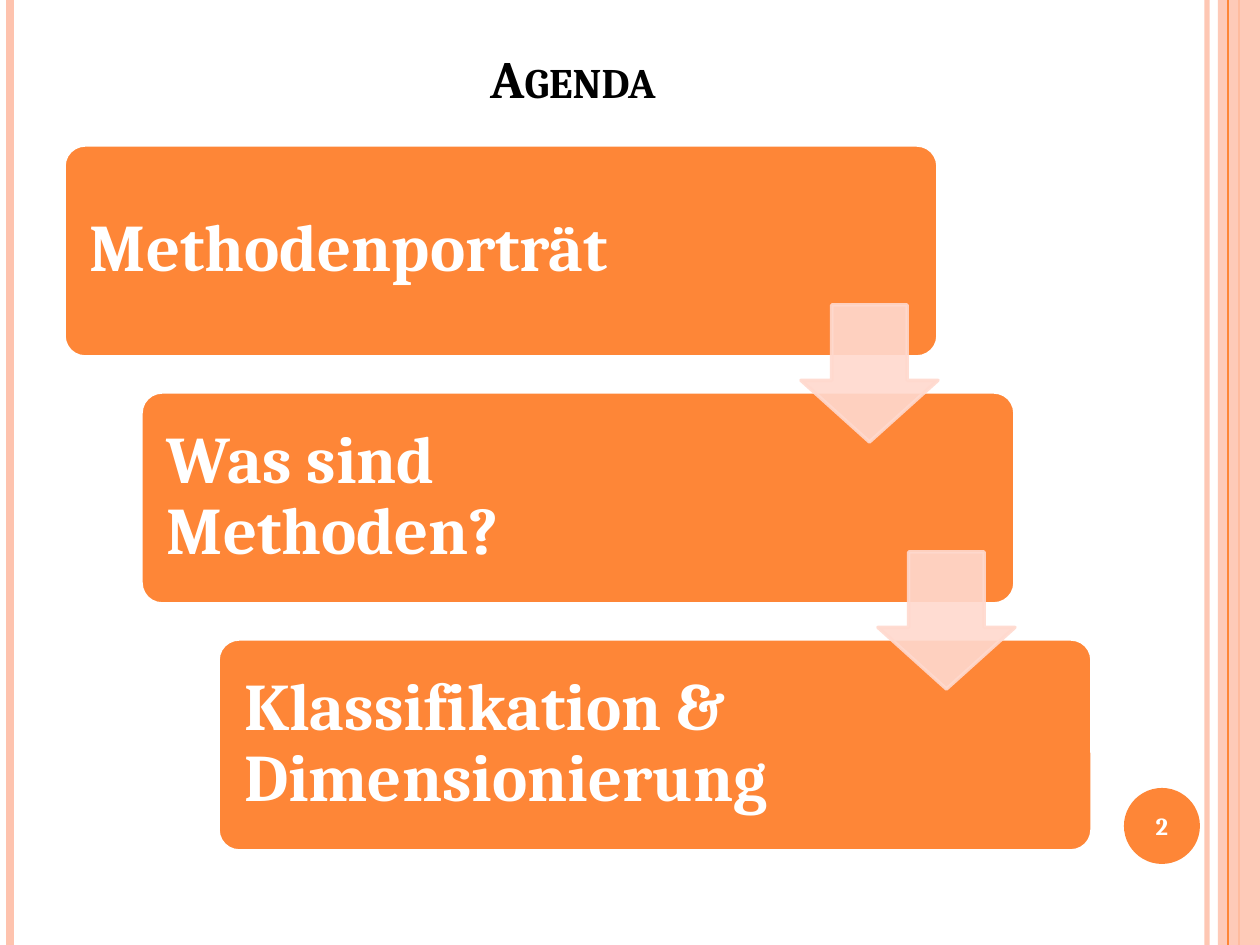
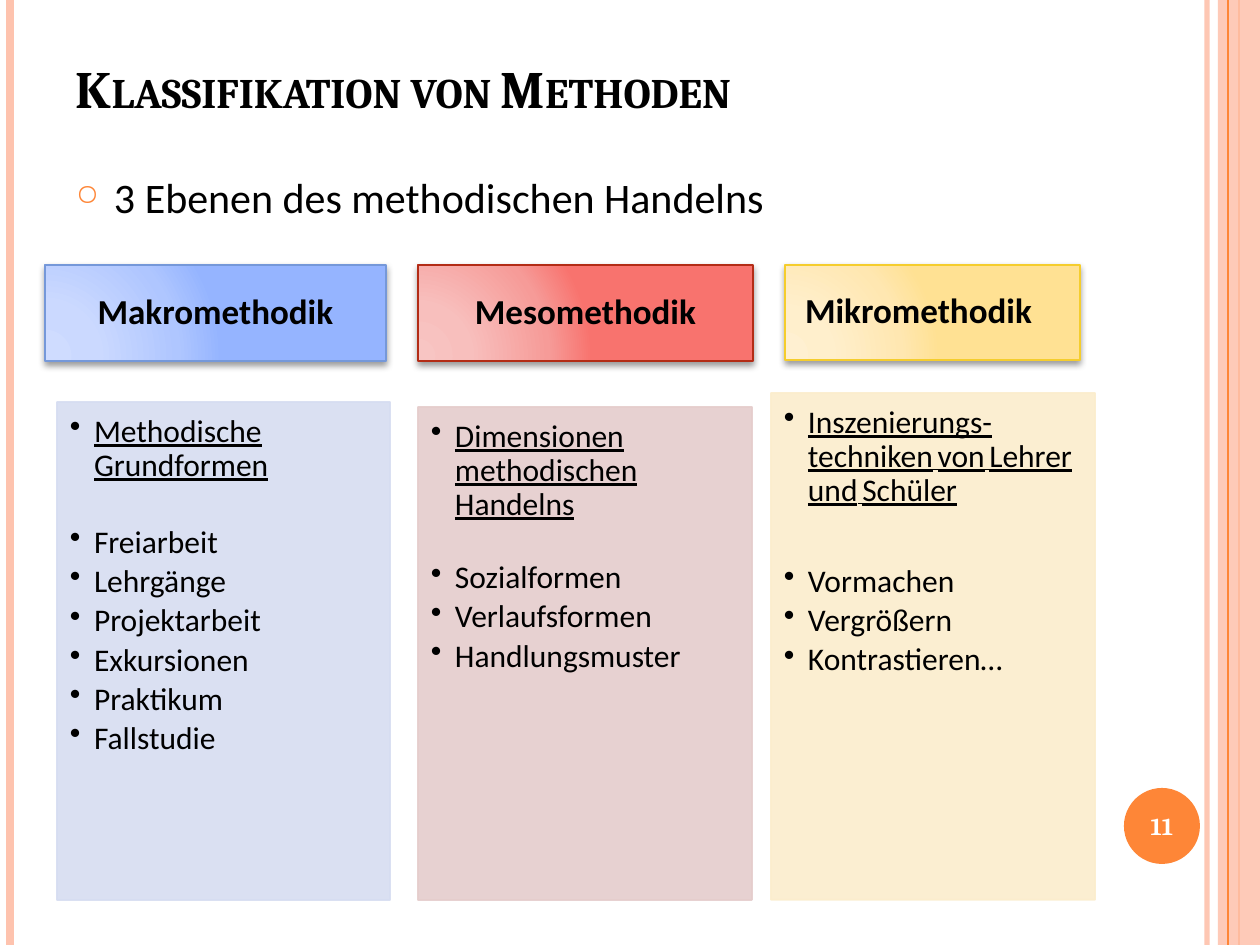
import pptx
import pptx.dml.color
import pptx.enum.shapes
import pptx.enum.text
import pptx.oxml
import pptx.oxml.ns
import pptx.util

SCALE = 914400 / 126  # EMU in one px
WIDE, HIGH = 1260, 945
INK, WHITE, MAIN, PALE, BLUSH = "000000", "FFFFFF", "FE8637", "FEC3AE", "FFD9CE"
SERIF, SANS = "Cambria", "Calibri"
KIND = pptx.enum.shapes.MSO_SHAPE
ALIGN = pptx.enum.text.PP_ALIGN
ANCHOR = pptx.enum.text.MSO_ANCHOR
PAD = (13, 6, 13, 6)

# Agenda layout: each step moves right and down by the same amount
STEPS = ["Methodenporträt", "Was sind Methoden?", "Klassifikation & Dimensionierung"]
STEP_X, STEP_Y = 77, 247

# Columns: name, head box, head style, list box, list colour, topic,
# (size, font) of the gaps between topic words, space after topic, items
LEVELS = [
    ("Makromethodik", (45, 265, 341, 96), ALIGN.CENTER, "7598D9",
     ["CFDCFF", "CBD9FF", "AFC6FF", "95B4FF"], (57, 402, 333, 498), "D6DDF1",
     "Methodische Grundformen", (18, SANS), 24.5,
     ["Freiarbeit", "Lehrgänge", "Projektarbeit", "Exkursionen", "Praktikum", "Fallstudie"]),
    ("Mesomethodik", (418, 265, 335, 96), ALIGN.CENTER, "B32C16",
     ["F8C5C3", "F8BFBD", "F69B98", "F8736E"], (418, 407, 334, 493), "E5CDCC",
     "Dimensionen methodischen Handelns", (18, SANS), 22.5,
     ["Sozialformen", "Verlaufsformen", "Handlungsmuster"]),
    ("Mikromethodik", (785, 265, 295, 95), ALIGN.LEFT, "F5CD2D",
     ["FFF0D1", "FFEFCC", "FFE7B1", "FFE193"], (771, 393, 324, 507), "FBEDCD",
     "Inszenierungs- techniken von Lehrer und Schüler", (12, SERIF), 32.5,
     ["Vormachen", "Vergrößern", "Kontrastieren…"]),
]


def px(num):
    return pptx.util.Emu(round(num * SCALE))


def rgb(code):
    return pptx.dml.color.RGBColor.from_string(code)


def make(xml):
    """Build a drawing element from its tag text."""
    space = pptx.oxml.ns.nsdecls("a")
    cut = min(xml.index(end) for end in " />" if end in xml)
    return pptx.oxml.parse_xml(f"{xml[:cut]} {space}{xml[cut:]}")


def fade(shape, part):
    """Make the fill and line of a shape partly see-through."""
    for tone in shape.element.spPr.iter(pptx.oxml.ns.qn("a:srgbClr")):
        tone.append(make(f'<a:alpha val="{part * 1000}"/>'))


def draw(slide, kind, box, fill, edge=None, width=1):
    shape = slide.shapes.add_shape(kind, *map(px, box))
    shape.shadow.inherit = False
    shape.fill.solid()
    shape.fill.fore_color.rgb = rgb(fill)
    if edge:
        shape.line.color.rgb = rgb(edge)
        shape.line.width = pptx.util.Pt(width)
    else:
        shape.line.fill.background()
    return shape


def rule(slide, x, color, width):
    """Vertical line over the full height."""
    line = slide.shapes.add_connector(
        pptx.enum.shapes.MSO_CONNECTOR.STRAIGHT, px(x), 0, px(x), px(HIGH))
    line.line.color.rgb = rgb(color)
    line.line.width = pptx.util.Pt(width)
    line.element.spPr.append(make("<a:effectLst/>"))
    return line


def style(run, font, size, color=INK, bold=False):
    run.font.name = font
    run.font.size = pptx.util.Pt(size)
    run.font.color.rgb = rgb(color)
    run.font.bold = bold


def frame(shape, pad=PAD, anchor=ANCHOR.TOP):
    text = shape.text_frame
    text.word_wrap = True
    text.vertical_anchor = anchor
    text.margin_left, text.margin_top, text.margin_right, text.margin_bottom = map(px, pad)
    return text


def write(shape, words, font, size, color=INK, bold=False, align=ALIGN.LEFT,
          pad=PAD, anchor=ANCHOR.MIDDLE, lead=None):
    """Fill a shape with one paragraph and return it."""
    text = frame(shape, pad, anchor)
    text.text = words
    para = text.paragraphs[0]
    para.alignment = align
    if lead:
        para.line_spacing = lead
    style(para.runs[0], font, size, color, bold)
    return para


def label(slide, box, *args, **opts):
    return write(slide.shapes.add_textbox(*map(px, box)), *args, **opts)


def dot(para, char, dent, color=None, size=None):
    """Hanging bullet."""
    props = para._p.get_or_add_pPr()
    props.set("marL", str(px(dent)))
    props.set("indent", str(-px(dent)))
    if color:
        props.append(make(f'<a:buClr><a:srgbClr val="{color}"/></a:buClr>'))
    if size:
        props.append(make(f'<a:buSzPct val="{size * 1000}"/>'))
    props.append(make(f'<a:buChar char="{char}"/>'))


def base(deck, title, high, align, number):
    """Slide with the side bands, number badge and title."""
    slide = deck.slides.add_slide(deck.slide_layouts[6])
    fade(rule(slide, 1207, PALE, 3), 93)
    rule(slide, 10, PALE, 4.5)
    rule(slide, 1239, MAIN, 1.5)
    fade(draw(slide, KIND.RECTANGLE, (1218, 0, 42, HIGH), PALE), 87)
    rule(slide, 1228, MAIN, 0.75)
    badge = draw(slide, KIND.OVAL, (1124, 788, 76, 76), MAIN)
    write(badge, number, SERIF, 14, WHITE, True, ALIGN.CENTER, (0, 0, 0, 0))
    head = label(slide, (63, 38, 1029, high), title, SERIF, 30, bold=True,
                 align=align, anchor=ANCHOR.BOTTOM)
    head.runs[0].font._element.set("cap", "small")
    return slide


def step(slide, x, y, words):
    """Rounded agenda card."""
    card = draw(slide, KIND.ROUNDED_RECTANGLE, (x, y, 874, 212), MAIN, WHITE, 2)
    card.adjustments[0] = 0.1
    label(slide, (x + 6, y + 6, 647, 199), words, SERIF, 38, WHITE, True,
          pad=(20, 20, 20, 20), lead=0.9)


def arrow(slide, x, y):
    """Arrow from the card at x, y to the next one."""
    shape = draw(slide, KIND.DOWN_ARROW, (x + 737, y + 160, 137, 137), BLUSH, BLUSH, 2)
    shape.adjustments[0] = 0.55
    shape.adjustments[1] = 0.45
    fade(shape, 90)


def agenda(deck):
    slide = base(deck, "Agenda ", 77, ALIGN.CENTER, "2")
    spots = [(64 + i * STEP_X, 145 + i * STEP_Y) for i in range(len(STEPS))]
    for (x, y), words in zip(spots, STEPS):
        step(slide, x, y, words)
    for x, y in spots[:-1]:
        arrow(slide, x, y)


def glow(shape, tones):
    """Round gradient and a soft shadow below."""
    stops = "".join(f'<a:gs pos="{pos * 1000}"><a:srgbClr val="{tone}"/></a:gs>'
                    for pos, tone in zip((0, 30, 75, 100), tones))
    props = shape.element.spPr
    props.replace(props.find(pptx.oxml.ns.qn("a:solidFill")), make(
        f'<a:gradFill><a:gsLst>{stops}</a:gsLst><a:path path="circle">'
        '<a:fillToRect l="5000" t="100000" r="120000" b="10000"/></a:path></a:gradFill>'))
    props.find(pptx.oxml.ns.qn("a:effectLst")).append(make(
        f'<a:outerShdw blurRad="50800" dist="25400" dir="5400000" rotWithShape="0">'
        f'<a:srgbClr val="{INK}"><a:alpha val="40000"/></a:srgbClr></a:outerShdw>'))


def topic(para, words, gap):
    """Underlined list heading with its own style for word gaps."""
    size, font = gap
    for i, word in enumerate(words.split()):
        if i:
            run = para.add_run()
            run.text = " "
            style(run, font, size)
        run = para.add_run()
        run.text = word
        style(run, SANS, 18)
    for run in para.runs:
        run.font.underline = True


def level(slide, name, top, align, edge, tones, box, tint, theme, gap, after, items):
    """Column: gradient head and a tinted list."""
    head = draw(slide, KIND.RECTANGLE, top, tones[-1], edge)
    glow(head, tones)
    write(head, name, SANS, 20, bold=True, align=align, pad=(20, 11, 20, 11), lead=0.9)

    panel = draw(slide, KIND.RECTANGLE, box, tint, tint)
    fade(panel, 90)
    text = frame(panel, (13, 13, 18, 20))
    topic(text.paragraphs[0], theme, gap)
    for item in items:
        para = text.add_paragraph()
        para.text = item
        style(para.runs[0], SANS, 18)
    for i, para in enumerate(text.paragraphs):
        para.alignment = ALIGN.LEFT
        para.line_spacing = 0.9
        para.space_after = pptx.util.Pt(3 if i else after)
        dot(para, "•", 24)


def classes(deck):
    slide = base(deck, "Klassifikation von Methoden", 87, ALIGN.LEFT, "11")
    lead = label(slide, (63, 165, 1029, 727), "3 Ebenen des methodischen Handelns",
                 SANS, 24, anchor=ANCHOR.TOP)
    lead.space_before = pptx.util.Pt(6)
    dot(lead, "○", 38, MAIN, 70)
    for item in LEVELS:
        level(slide, *item)


def main():
    deck = pptx.Presentation()
    deck.slide_width, deck.slide_height = px(WIDE), px(HIGH)
    agenda(deck)
    classes(deck)
    deck.save("out.pptx")


if __name__ == "__main__":
    main()
